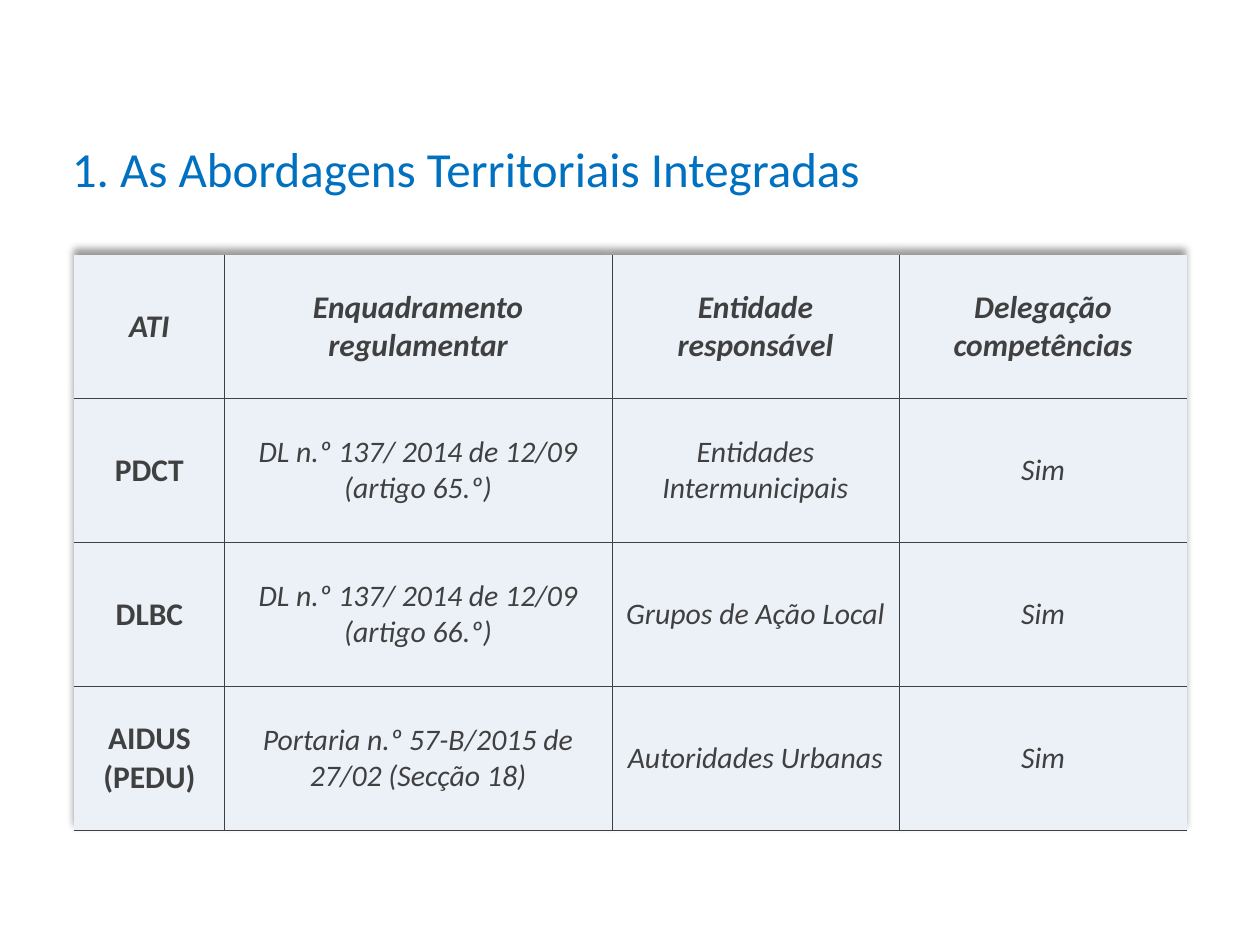
from dataclasses import dataclass

from lxml.etree import SubElement
from pptx import Presentation
from pptx.dml.color import RGBColor
from pptx.enum.text import MSO_ANCHOR, PP_ALIGN
from pptx.oxml import parse_xml
from pptx.oxml.ns import qn
from pptx.util import Inches, Pt

NS = 'xmlns:a="http://schemas.openxmlformats.org/drawingml/2006/main"'
PLAIN_STYLE = "{2D5ABB26-0587-4C30-8999-92F81FD0307C}"


@dataclass(frozen=True)
class Theme:
    font: str = "Calibri"
    title_color: str = "0070C0"
    ink: str = "404040"
    cell_fill: str = "ECF1F8"
    title_size: float = 28
    label_size: float = 18
    detail_size: float = 17
    rule_width: float = 0.25


THEME = Theme()

APPROACHES = [
    ["ATI", "Enquadramento regulamentar", "Entidade\nresponsável", "Delegação competências"],
    ["PDCT", "DL n.º 137/ 2014 de 12/09\n(artigo 65.º)", "Entidades Intermunicipais", "Sim"],
    ["DLBC", "DL n.º 137/ 2014 de 12/09\n(artigo 66.º)", "Grupos de Ação Local", "Sim"],
    ["AIDUS (PEDU)", "Portaria n.º 57-B/2015 de 27/02 (Secção 18)", "Autoridades Urbanas", "Sim"],
]
COLUMN_WIDTHS = [1.19, 3.07, 2.28, 2.28]


def style_paragraph(paragraph, size, color, align, bold=False, italic=False):
    paragraph.alignment = align
    for run in paragraph.runs:
        font = run.font
        font.name, font.size = THEME.font, Pt(size)
        font.bold, font.italic = bold, italic
        font.color.rgb = RGBColor.from_string(color)


def set_borders(cell, ruled_sides):
    """Rule the given sides of a cell and clear the others."""
    properties = cell._tc.get_or_add_tcPr()
    for position, side in enumerate(("L", "R", "T", "B")):
        border = parse_xml(f'<a:ln{side} {NS} w="{Pt(THEME.rule_width)}"/>')
        if side in ruled_sides:
            fill = SubElement(border, qn("a:solidFill"))
            SubElement(fill, qn("a:srgbClr"), val=THEME.ink)
        else:
            SubElement(border, qn("a:noFill"))
        properties.insert(position, border)


def add_table_shadow(table):
    table._tbl.tblPr.insert(0, parse_xml(
        f'<a:effectLst {NS}><a:outerShdw blurRad="{Inches(0.06)}" dist="{Inches(0.04)}"'
        ' dir="16200000" rotWithShape="0"><a:srgbClr val="000000">'
        '<a:alpha val="40000"/></a:srgbClr></a:outerShdw></a:effectLst>'))


def place_title(slide, left, top, width, height):
    title = slide.shapes.title
    title.left, title.top, title.width, title.height = left, top, width, height
    frame = title.text_frame
    frame.text = "1. As Abordagens Territoriais Integradas"
    frame.word_wrap = True
    frame.vertical_anchor = MSO_ANCHOR.TOP
    style_paragraph(frame.paragraphs[0], THEME.title_size, THEME.title_color, PP_ALIGN.LEFT)


def place_approaches(slide, left, top, width, height):
    row_count, column_count = len(APPROACHES), len(COLUMN_WIDTHS)
    table = slide.shapes.add_table(row_count, column_count, left, top, width, height).table
    table.first_row = table.horz_banding = False
    table._tbl.tblPr.find(qn("a:tableStyleId")).text = PLAIN_STYLE
    add_table_shadow(table)

    # Columns share the width in proportion
    for column, share in zip(table.columns, COLUMN_WIDTHS):
        column.width = int(width * share / sum(COLUMN_WIDTHS))

    for row, entries in enumerate(APPROACHES):
        for col, entry in enumerate(entries):
            cell = table.cell(row, col)
            cell.text_frame.text = entry
            cell.vertical_anchor = MSO_ANCHOR.MIDDLE
            cell.fill.solid()
            cell.fill.fore_color.rgb = RGBColor.from_string(THEME.cell_fill)

            # Header row and first column are bold; only row labels are upright
            is_label = row == 0 or col == 0
            size = THEME.label_size if is_label else THEME.detail_size
            for paragraph in cell.text_frame.paragraphs:
                style_paragraph(paragraph, size, THEME.ink, PP_ALIGN.CENTER,
                                bold=is_label, italic=row == 0 or col > 0)

            # Rules between cells and under the last row
            sides = {"B"}
            if row > 0:
                sides.add("T")
            if col > 0:
                sides.add("L")
            if col < column_count - 1:
                sides.add("R")
            set_borders(cell, sides)


def main():
    presentation = Presentation()
    presentation.slide_width, presentation.slide_height = Inches(10), Inches(7.5)
    slide = presentation.slides.add_slide(presentation.slide_layouts[5])
    place_title(slide, Inches(0.47), Inches(1.05), Inches(9.06), Inches(0.57))
    place_approaches(slide, Inches(0.59), Inches(2.02), Inches(8.83), Inches(4.57))
    presentation.save("out.pptx")


if __name__ == "__main__":
    main()
